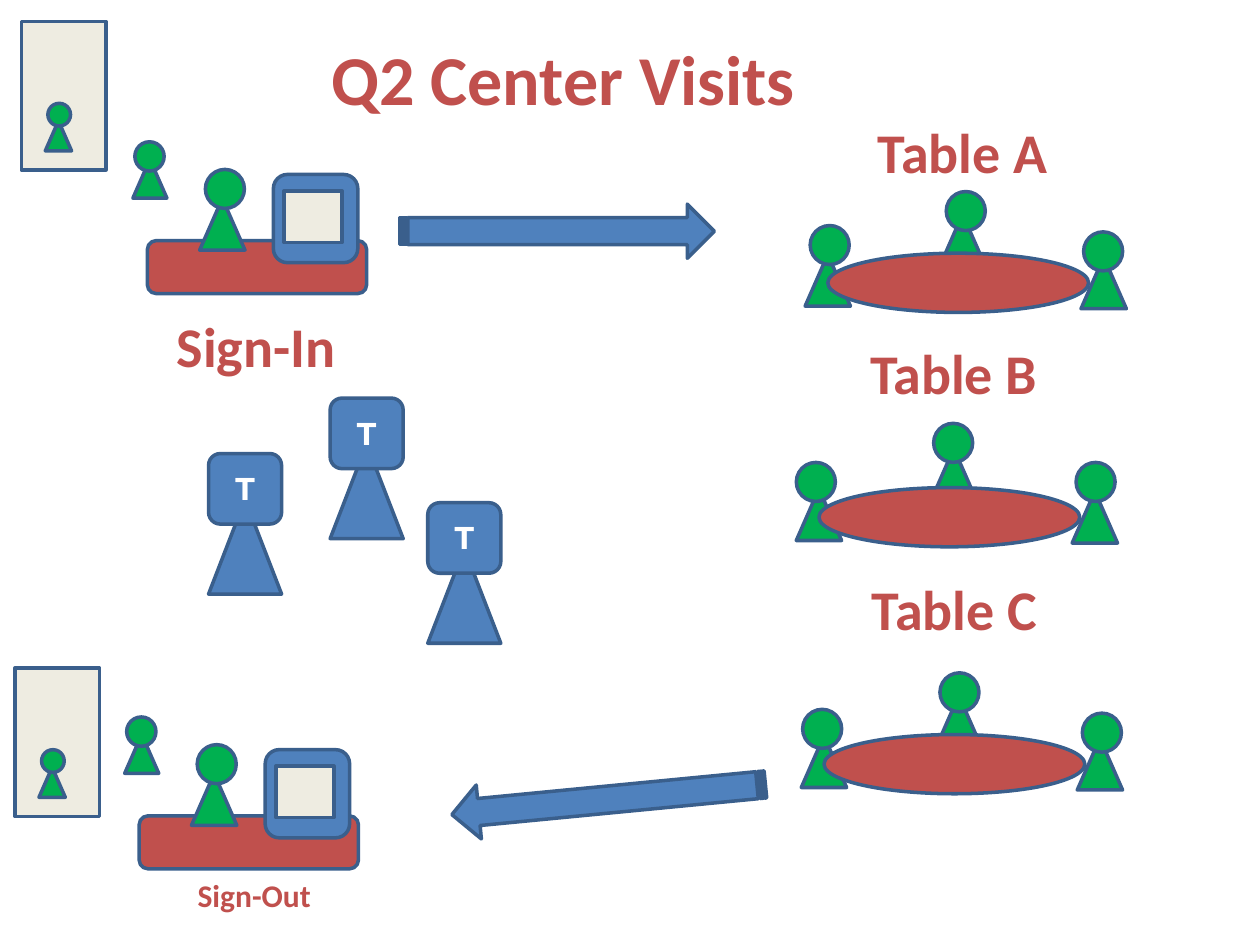
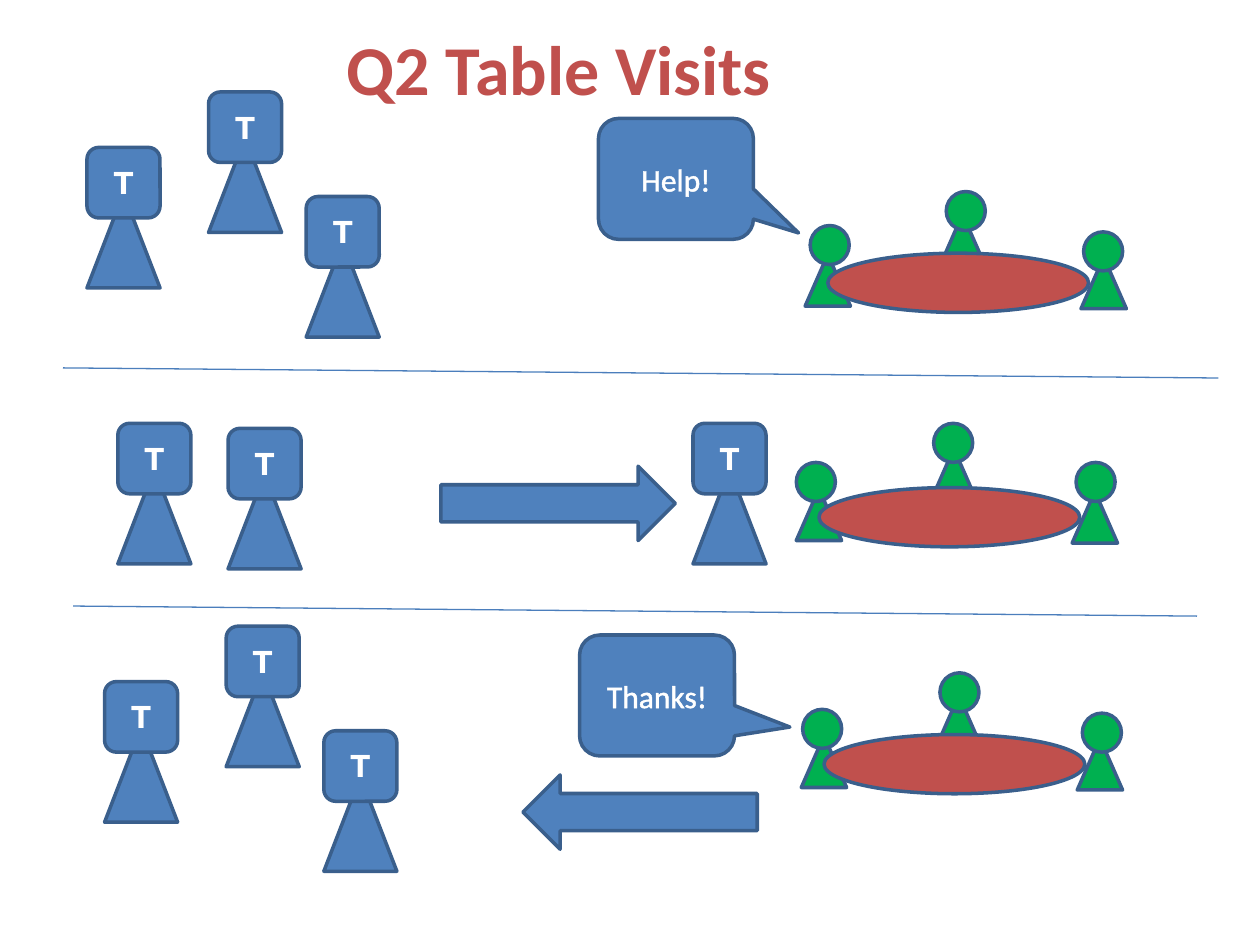
"""Build two slides that show how visits to the Q2 center and its tables run."""
from dataclasses import dataclass

import lxml.etree
import pptx
import pptx.dml.color
import pptx.enum.shapes
import pptx.enum.text
import pptx.oxml.ns
import pptx.shapes.autoshape
import pptx.slide
import pptx.util

RGBColor = pptx.dml.color.RGBColor
Shape = pptx.enum.shapes.MSO_SHAPE
Align = pptx.enum.text.PP_ALIGN
Anchor = pptx.enum.text.MSO_ANCHOR
Slide = pptx.slide.Slide
Point = tuple[float, float]

GREEN = RGBColor(0x00, 0xB0, 0x50)
BLUE = RGBColor(0x4F, 0x81, 0xBD)
RED = RGBColor(0xC0, 0x50, 0x4D)
CREAM = RGBColor(0xEE, 0xEC, 0xE1)
OUTLINE = RGBColor(0x3A, 0x5F, 0x8C)
DIVIDER = RGBColor(0x4B, 0x7E, 0xBC)
WHITE = RGBColor(0xFF, 0xFF, 0xFF)
BODY_FONT, TUTOR_FONT = "Calibri", "Montserrat"

SLIDE_W, SLIDE_H = pptx.util.Inches(10), pptx.util.Inches(7.5)
COL, ROW = SLIDE_W / 100, SLIDE_H / 75

TRIO = ((0, 0), (-9.65, 4.4), (7.75, 8.3))
SEATS = ((-1.8, 0.1), (8.9, -3.1), (20.1, 0.3))


@dataclass(frozen=True)
class Box:
    """A rectangle in grid columns and rows."""
    x: float
    y: float
    w: float
    h: float

    def emu(self) -> tuple[int, int, int, int]:
        """Return left, top, width and height in EMU."""
        return (round(self.x * COL), round(self.y * ROW),
                round(self.w * COL), round(self.h * ROW))


@dataclass(frozen=True)
class Label:
    """A bold line of text in a box."""
    text: str
    box: Box
    size: int = 32
    color: RGBColor = RED
    font: str = BODY_FONT
    align: Align = Align.CENTER


@dataclass(frozen=True)
class Table:
    """A round table and the head offset of each of its three visitors."""
    x: float
    y: float
    heads: tuple[Point, Point, Point]


@dataclass(frozen=True)
class Callout:
    """A speech bubble and its pointer adjustments."""
    text: str
    x: float
    y: float
    tip: Point


TABLES = (
    Table(65, 38.7, ((0, -2.1), (0.2, -2), (0.3, -2.3))),
    Table(65.4, 58.3, ((0.1, -2.1), (0.3, -1.8), (0.4, -2))),
    Table(65.7, 20.1, ((0.4, -2.3), (0.5, -1.8), (0.2, -2))),
)
CENTER_LABELS = (
    Label("Table A", Box(68.6, 8.8, 15.6, 6.4)),
    Label("Table B", Box(68, 26.4, 15.4, 6.4)),
    Label("Table C", Box(68.1, 45.1, 15.3, 6.4)),
    Label("Sign-In", Box(13, 24.2, 14.7, 6.4)),
    Label("Sign-Out", Box(14.7, 69, 11.1, 4), size=18, align=Align.LEFT),
)
CALLOUTS = (
    Callout("Help!", 47.5, 9.4, (0.791, 0.447)),
    Callout("Thanks!", 46, 50.4, (0.857, 0.261)),
)
DIVIDERS = (((5, 29.2), (96.7, 30)), ((5.8, 48.1), (95, 48.9)))


def add_figure(slide: Slide, kind: Shape, box: Box, fill: RGBColor,
               rotation: float = 0) -> pptx.shapes.autoshape.Shape:
    """Add a filled, outlined preset shape."""
    sp = slide.shapes.add_shape(kind, *box.emu())
    sp.shadow.inherit = False
    sp.fill.solid()
    sp.fill.fore_color.rgb = fill
    sp.line.color.rgb = OUTLINE
    sp.line.width = pptx.util.Pt(2)
    sp.rotation = rotation
    return sp


def write(sp: pptx.shapes.autoshape.Shape, label: Label, bold: bool = True) -> None:
    """Write a label's text into a shape in the label's style."""
    p = sp.text_frame.paragraphs[0]
    p.text = label.text
    p.alignment = label.align
    p.font.name = label.font
    p.font.size = pptx.util.Pt(label.size)
    p.font.bold = bold
    p.font.color.rgb = label.color


def add_label(slide: Slide, label: Label) -> None:
    """Add a text box that fits its unwrapped line."""
    sp = slide.shapes.add_textbox(*label.box.emu())
    sp.text_frame.word_wrap = False
    sp.text_frame.auto_size = pptx.enum.text.MSO_AUTO_SIZE.SHAPE_TO_FIT_TEXT
    write(sp, label)


def add_visitor(slide: Slide, x: float, y: float, head: Point, scale: float = 1) -> None:
    """Add a green visitor whose body starts at x, y."""
    add_figure(slide, Shape.ISOSCELES_TRIANGLE, Box(x, y, 3.6 * scale, 4.1 * scale), GREEN)
    add_figure(slide, Shape.OVAL,
               Box(x + head[0], y + head[1], 3.1 * scale, 3.1 * scale), GREEN)


def add_table_group(slide: Slide, table: Table) -> None:
    """Add a table with two visitors behind it and one in front."""
    for i, ((dx, dy), head) in enumerate(zip(SEATS, table.heads)):
        if i == 2:
            add_figure(slide, Shape.OVAL, Box(table.x, table.y, 20.7, 4.7), RED)
        add_visitor(slide, table.x + dx, table.y + dy, head)


def add_tutor(slide: Slide, x: float, y: float) -> None:
    """Add a blue tutor whose head starts at x, y."""
    add_figure(slide, Shape.ISOSCELES_TRIANGLE, Box(x, y + 3.65, 5.8, 7.5), BLUE)
    add_figure(slide, Shape.ROUNDED_RECTANGLE, Box(x, y, 5.8, 5.6), BLUE)
    add_label(slide, Label("T", Box(x + 1, y + 0.75, 3.8, 4), 18, WHITE, TUTOR_FONT))


def add_trio(slide: Slide, x: float, y: float) -> None:
    """Add three waiting tutors around the middle one at x, y."""
    for dx, dy in TRIO:
        add_tutor(slide, x + dx, y + dy)


def add_station(slide: Slide, desk: Point, door: Point) -> None:
    """Add a desk with a computer and a queue that leads from a door."""
    x, y = desk
    add_figure(slide, Shape.ROUNDED_RECTANGLE, Box(x, y, 17.4, 4.2), RED)
    add_figure(slide, Shape.ROUNDED_RECTANGLE, Box(x + 10, y - 5.25, 6.7, 7), BLUE)
    add_figure(slide, Shape.RECTANGLE, Box(x + 10.85, y - 3.95, 4.6, 4.1), CREAM)
    add_visitor(slide, x + 4.15, y - 3.35, (0.45, -2.3))
    add_visitor(slide, x - 1.15, y - 6.45, (0.15, -1.4), 0.75)
    add_figure(slide, Shape.RECTANGLE, Box(*door, 6.7, 11.8), CREAM)
    add_visitor(slide, door[0] + 1.9, door[1] + 7.9, (0.2, -1.4), 0.58)


def add_callout(slide: Slide, callout: Callout) -> None:
    """Add a speech bubble with white outlined text."""
    box = Box(callout.x, callout.y, 12.3, 9.6)
    sp = add_figure(slide, Shape.ROUNDED_RECTANGULAR_CALLOUT, box, BLUE)
    for i, value in enumerate((*callout.tip, 0.167)):
        sp.adjustments[i] = value
    sp.text_frame.vertical_anchor = Anchor.MIDDLE
    write(sp, Label(callout.text, box, 18, WHITE), bold=False)
    qn = pptx.oxml.ns.qn
    r = sp.text_frame.paragraphs[0].runs[0]
    ln = lxml.etree.SubElement(r._r.get_or_add_rPr(), qn("a:ln"),
                               w=str(pptx.util.Pt(1.45)))
    fill = lxml.etree.SubElement(ln, qn("a:solidFill"))
    lxml.etree.SubElement(fill, qn("a:srgbClr"), val=str(WHITE))


def add_divider(slide: Slide, start: Point, end: Point) -> None:
    """Add a thin line between two stages."""
    ends = [round(v * unit) for v, unit in zip((*start, *end), (COL, ROW) * 2)]
    line = slide.shapes.add_connector(pptx.enum.shapes.MSO_CONNECTOR.STRAIGHT, *ends)
    line.line.color.rgb = DIVIDER
    line.line.width = pptx.util.Pt(0.75)
    lxml.etree.SubElement(line._element.spPr, pptx.oxml.ns.qn("a:effectLst"))


def add_titled_slide(prs: pptx.presentation.Presentation, title: Label) -> Slide:
    """Add a slide with its title and the three tables."""
    slide = prs.slides.add_slide(prs.slide_layouts[5])
    sp = slide.shapes.title
    sp.left, sp.top, sp.width, sp.height = title.box.emu()
    sp.text_frame.word_wrap = False
    sp.text_frame.vertical_anchor = Anchor.TOP
    write(sp, title)
    for table in TABLES:
        add_table_group(slide, table)
    return slide


def build_center_visits(prs: pptx.presentation.Presentation) -> None:
    """Build the slide on signing in and out of the center."""
    slide = add_titled_slide(prs, Label("Q2 Center Visits", Box(25.1, 2.3, 39.2, 7.7), 40))
    add_station(slide, desk=(11.7, 19.1), door=(1.7, 1.7))
    add_station(slide, desk=(11.05, 64.75), door=(1.2, 53))
    add_trio(slide, 26.2, 31.6)
    add_figure(slide, Shape.STRIPED_RIGHT_ARROW, Box(31.7, 16.2, 25, 4.3), BLUE)
    add_figure(slide, Shape.STRIPED_RIGHT_ARROW, Box(35.8, 61.3, 25, 4.3), BLUE, 174.5)
    for label in CENTER_LABELS:
        add_label(slide, label)


def build_table_visits(prs: pptx.presentation.Presentation) -> None:
    """Build the slide on a tutor's visit to a table."""
    slide = add_titled_slide(prs, Label("Q2 Table Visits", Box(26.3, 1.5, 36.1, 7.7), 40))
    add_trio(slide, 16.55, 7.3)
    for x, y in ((18.1, 34), (9.35, 33.6), (55, 33.6)):
        add_tutor(slide, x, y)
    add_trio(slide, 17.95, 49.7)
    add_figure(slide, Shape.RIGHT_ARROW, Box(35, 37, 18.6, 5.9), BLUE)
    add_figure(slide, Shape.RIGHT_ARROW, Box(41.5, 61.5, 18.6, 5.9), BLUE, 180)
    for callout in CALLOUTS:
        add_callout(slide, callout)
    for start, end in DIVIDERS:
        add_divider(slide, start, end)


def main() -> None:
    """Build and save the presentation."""
    prs = pptx.Presentation()
    prs.slide_width, prs.slide_height = SLIDE_W, SLIDE_H
    build_center_visits(prs)
    build_table_visits(prs)
    prs.save("out.pptx")


if __name__ == "__main__":
    main()
